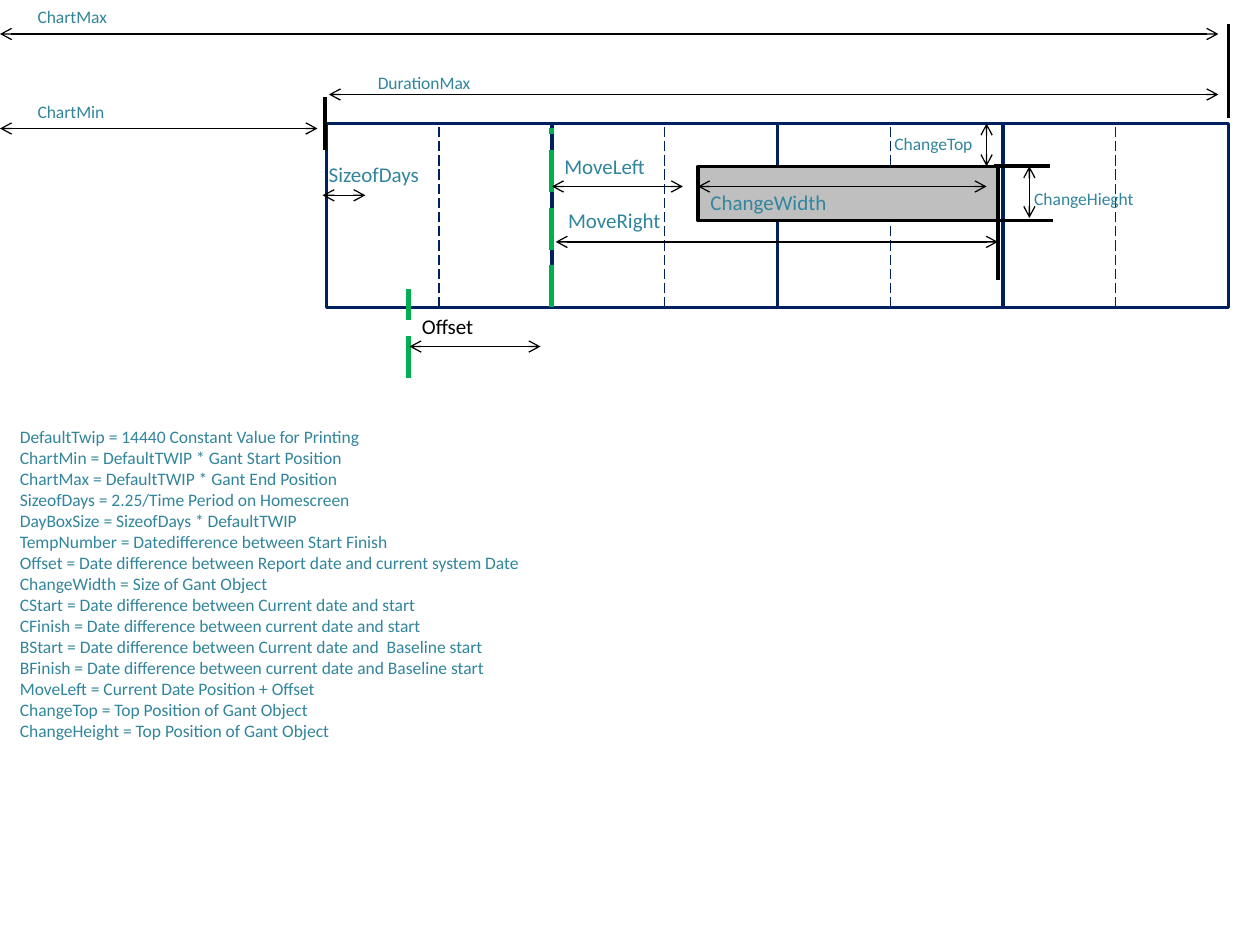
from dataclasses import dataclass
from typing import Optional

from lxml.etree import SubElement
from pptx import Presentation
from pptx.dml.color import RGBColor
from pptx.enum.dml import MSO_LINE
from pptx.enum.shapes import MSO_CONNECTOR, MSO_SHAPE
from pptx.enum.text import MSO_ANCHOR, MSO_AUTO_SIZE, PP_ALIGN
from pptx.oxml.ns import qn
from pptx.util import Emu, Pt


@dataclass(frozen=True)
class Theme:
    font: str = "Calibri"
    small: int = 10
    large: int = 12
    teal: str = "31859C"
    navy: str = "002060"
    green: str = "00B050"
    black: str = "000000"
    white: str = "FFFFFF"
    gray: str = "BFBFBF"


@dataclass(frozen=True)
class Box:
    x: int
    y: int
    w: int
    h: int


@dataclass(frozen=True)
class Label:
    text: str
    box: Box
    size: int
    color: str = Theme.teal


@dataclass(frozen=True)
class Line:
    x1: int
    y1: int
    x2: int
    y2: int
    width: float = 0.75
    color: str = Theme.black
    dashed: bool = False
    arrows: bool = False


THEME = Theme()
PX = 9144
WEEKS = 4
GRID = Box(259, 98, 179, 146)
BAR = Box(554, 132, 238, 43)

LABELS = [
    Label("ChartMax", Box(20, 0, 117, 27), THEME.small),
    Label("ChartMin", Box(20, 75, 100, 27), THEME.small),
    Label("DurationMax", Box(290, 52, 117, 27), THEME.small),
    Label("ChangeTop", Box(700, 101, 100, 27), THEME.small),
    Label("ChangeHieght", Box(811, 144, 144, 27), THEME.small),
    Label("MoveLeft", Box(438, 117, 108, 30), THEME.large),
    Label("MoveRight", Box(441, 160, 108, 30), THEME.large),
    Label("SizeofDays", Box(251, 123, 108, 30), THEME.large),
    Label("Offset", Box(325, 244, 108, 30), THEME.large, THEME.black),
]

DATE_MARKS = [
    Line(438, 244, 438, 102, 3, THEME.green, dashed=True),
    Line(324, 300, 324, 229, 3, THEME.green, dashed=True),
]

LIMITS = [
    Line(258, 77, 258, 119, 2.25),
    Line(975, 19, 975, 94, 2.25),
    Line(792, 175, 792, 222, 2.25),
    Line(789, 132, 833, 132, 2.25),
    Line(792, 175, 836, 175, 2.25),
]

DIMENSIONS = [
    Line(*ends, arrows=True)
    for ends in [
        (0, 27, 967, 27),
        (0, 102, 252, 102),
        (261, 75, 967, 75),
        (438, 148, 542, 148),
        (441, 192, 792, 192),
        (554, 148, 783, 148),
        (783, 132, 783, 98),
        (817, 173, 817, 132),
        (325, 275, 429, 275),
        (256, 155, 290, 155),
    ]
]

DEFINITIONS = [
    "DefaultTwip = 14440 Constant Value for Printing",
    "ChartMin = DefaultTWIP * Gant Start Position",
    "ChartMax = DefaultTWIP * Gant End Position",
    "SizeofDays = 2.25/Time Period on Homescreen",
    "DayBoxSize = SizeofDays * DefaultTWIP",
    "TempNumber = Datedifference between Start Finish",
    "Offset = Date difference between Report date and current system Date",
    "ChangeWidth = Size of Gant Object",
    "CStart = Date difference between Current date and start",
    "CFinish = Date difference between current date and start",
    "BStart = Date difference between Current date and  Baseline start",
    "BFinish = Date difference between current date and Baseline start",
    "MoveLeft = Current Date Position + Offset",
    "ChangeTop = Top Position of Gant Object",
    "ChangeHeight = Top Position of Gant Object",
]


def px(n: int) -> Emu:
    return Emu(n * PX)


def place(box: Box) -> tuple:
    return px(box.x), px(box.y), px(box.w), px(box.h)


def write(tf, text: str, size: int, color: str) -> None:
    tf.word_wrap = True
    tf.text = text
    for p in tf.paragraphs:
        p.alignment = PP_ALIGN.LEFT
        for r in p.runs:
            r.font.name = THEME.font
            r.font.size = Pt(size)
            r.font.color.rgb = RGBColor.from_string(color)


def add_rect(s, box: Box, fill: str, line: str):
    sp = s.shapes.add_shape(MSO_SHAPE.RECTANGLE, *place(box))
    sp.shadow.inherit = False
    sp.fill.solid()
    sp.fill.fore_color.rgb = RGBColor.from_string(fill)
    sp.line.color.rgb = RGBColor.from_string(line)
    sp.line.width = Pt(2)
    return sp


def add_label(s, label: Label) -> None:
    tf = s.shapes.add_textbox(*place(label.box)).text_frame
    write(tf, label.text, label.size, label.color)
    tf.auto_size = MSO_AUTO_SIZE.SHAPE_TO_FIT_TEXT


def add_line(s, line: Line, joined: Optional[object] = None) -> None:
    c = s.shapes.add_connector(
        MSO_CONNECTOR.STRAIGHT, px(line.x1), px(line.y1), px(line.x2), px(line.y2)
    )
    if joined is not None:
        c.begin_connect(joined, 2)
        c.end_connect(joined, 0)
    c.line.color.rgb = RGBColor.from_string(line.color)
    c.line.width = Pt(line.width)
    if line.dashed:
        c.line.dash_style = MSO_LINE.LONG_DASH
    if line.arrows:
        for tag in ("a:headEnd", "a:tailEnd"):
            SubElement(c.line._get_or_add_ln(), qn(tag), type="arrow")
    SubElement(c._element.spPr, qn("a:effectLst"))


def add_grid(s) -> None:
    for i in range(WEEKS):
        x = GRID.x + i * GRID.w
        week = add_rect(s, Box(x, GRID.y, GRID.w, GRID.h), THEME.white, THEME.navy)
        mid = x + GRID.w // 2
        half = Line(mid, GRID.y + GRID.h, mid, GRID.y, color=THEME.navy, dashed=True)
        add_line(s, half, joined=week)


def add_bar(s) -> None:
    tf = add_rect(s, BAR, THEME.gray, THEME.black).text_frame
    write(tf, "ChangeWidth", THEME.large, THEME.teal)
    tf.vertical_anchor = MSO_ANCHOR.BOTTOM


def main() -> None:
    prs = Presentation()
    prs.slide_width, prs.slide_height = px(1000), px(750)
    s = prs.slides.add_slide(prs.slide_layouts[6])
    add_grid(s)
    add_bar(s)
    for label in LABELS:
        add_label(s, label)
    for line in DATE_MARKS + LIMITS + DIMENSIONS:
        add_line(s, line)
    add_label(s, Label("\n".join(DEFINITIONS), Box(6, 333, 424, 330), THEME.small))
    prs.save("out.pptx")


if __name__ == "__main__":
    main()
